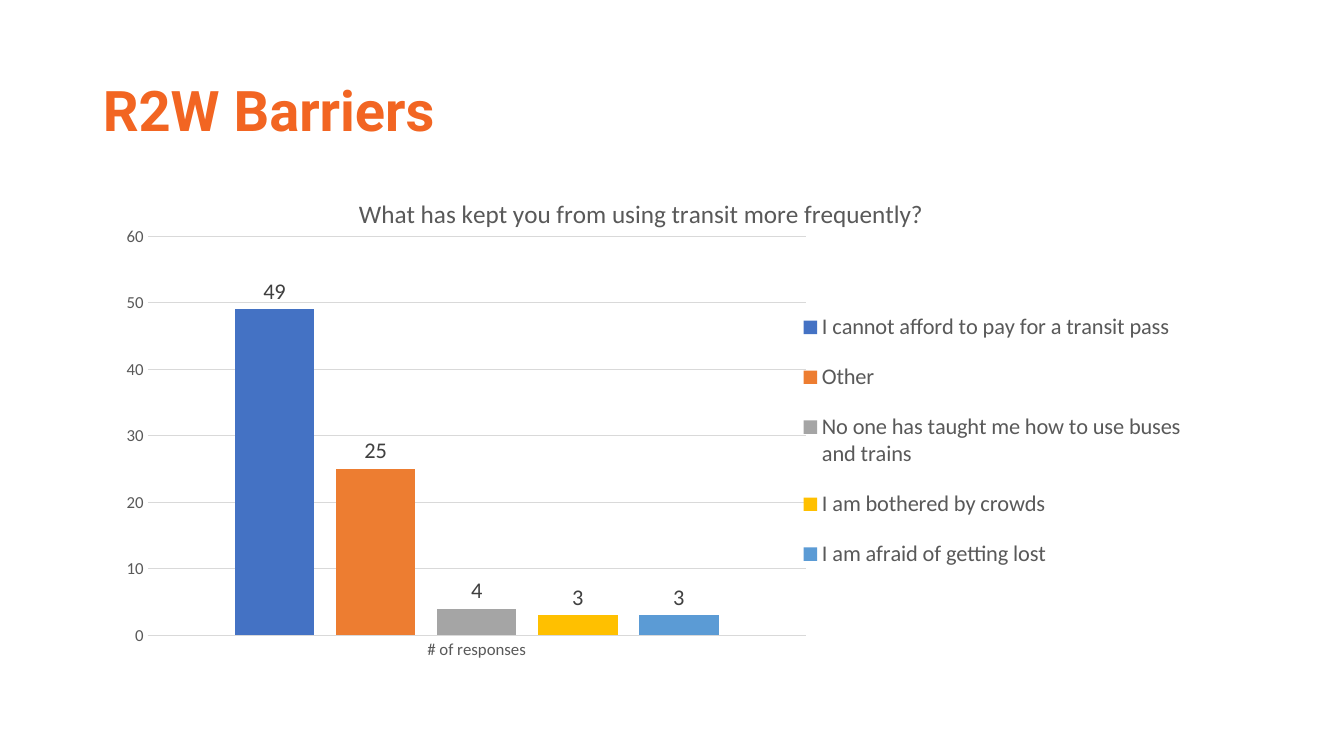
from lxml import etree
from pptx import Presentation
from pptx.chart.data import CategoryChartData
from pptx.dml.color import RGBColor
from pptx.enum import chart as ch, text
from pptx.oxml import ns
from pptx.util import Inches, Pt

HUES = {
    "title": "F26522", "text": "595959", "label": "404040", "grid": "D9D9D9",
    "blue": "4472C4", "orange": "ED7D31", "gray": "A5A5A5",
    "gold": "FFC000", "sky": "5B9BD5",
}
ROWS = [
    ("I cannot afford to pay for a transit pass", 49, "blue"),
    ("Other", 25, "orange"),
    ("No one has taught me how to use buses and trains", 4, "gray"),
    ("I am bothered by crowds", 3, "gold"),
    ("I am afraid of getting lost", 3, "sky"),
]


def style(font, size, hue, face="Calibri", bold=False):
    font.size = Pt(size)
    font.name = face
    font.bold = bold
    font.color.rgb = RGBColor.from_string(HUES[hue])


def place(node, after, box, inner=False):
    for old in node.findall(ns.qn("c:layout")):
        node.remove(old)
    layout = etree.Element(ns.qn("c:layout"))
    manual = etree.SubElement(layout, ns.qn("c:manualLayout"))
    parts = [("layoutTarget", "inner")] if inner else []
    parts += [("xMode", "edge"), ("yMode", "edge")]
    parts += zip("xywh", map(str, box))
    for tag, val in parts:
        etree.SubElement(manual, ns.qn("c:" + tag)).set("val", val)
    if after is None:
        node.insert(0, layout)
    else:
        after.addnext(layout)


prs = Presentation()
prs.slide_width = Inches(13.33)
prs.slide_height = Inches(7.5)
slide = prs.slides.add_slide(prs.slide_layouts[5])

title = slide.shapes.title
title.left, title.top = Inches(0.92), Inches(0.4)
title.width, title.height = Inches(11.5), Inches(1.45)
frame = title.text_frame
frame.text = "R2W Barriers"
frame.vertical_anchor = text.MSO_ANCHOR.MIDDLE
para = frame.paragraphs[0]
para.alignment = text.PP_ALIGN.LEFT
para.line_spacing = 0.9
style(para.runs[0].font, 40, "title", "Roboto", True)

data = CategoryChartData()
data.categories = ["# of responses"]
for name, count, hue in ROWS:
    data.add_series(name, [count])
chart = slide.shapes.add_chart(
    ch.XL_CHART_TYPE.COLUMN_CLUSTERED, Inches(0.92), Inches(1.75),
    Inches(10.88), Inches(4.95), data).chart
chart.font.name = "Calibri"
chart.font.size = Pt(10)

chart.has_title = True
head = chart.chart_title.text_frame
head.text = "What has kept you from using transit more frequently?"
style(head.paragraphs[0].runs[0].font, 18, "text")

plot = chart.plots[0]
plot.gap_width = 219
plot.overlap = -27
plot.vary_by_categories = False
for bar, (name, count, hue) in zip(plot.series, ROWS):
    bar.format.fill.solid()
    bar.format.fill.fore_color.rgb = RGBColor.from_string(HUES[hue])
    tags = bar.data_labels
    tags.show_value = True
    tags.position = ch.XL_LABEL_POSITION.OUTSIDE_END
    style(tags.font, 16, "label")

cats, vals = chart.category_axis, chart.value_axis
for axis in (cats, vals):
    axis.major_tick_mark = ch.XL_TICK_MARK.NONE
    axis.minor_tick_mark = ch.XL_TICK_MARK.NONE
    style(axis.tick_labels.font, 12, "text")
vals.minimum_scale, vals.maximum_scale, vals.major_unit = 0, 60, 10
vals.has_major_gridlines = True
vals.format.line.fill.background()
for line in (cats.format.line, vals.major_gridlines.format.line):
    line.color.rgb = RGBColor.from_string(HUES["grid"])
    line.width = Pt(0.75)

chart.has_legend = True
legend = chart.legend
legend.position = ch.XL_LEGEND_POSITION.RIGHT
legend.include_in_layout = False
style(legend.font, 16, "text")

root = chart.element
area = root.find(".//" + ns.qn("c:plotArea"))
place(area, None, (0.05, 0.12, 0.6, 0.8), True)
key = root.find(".//" + ns.qn("c:legend"))
place(key, key.find(ns.qn("c:legendPos")), (0.64, 0.23, 0.36, 0.6))

prs.save("out.pptx")
